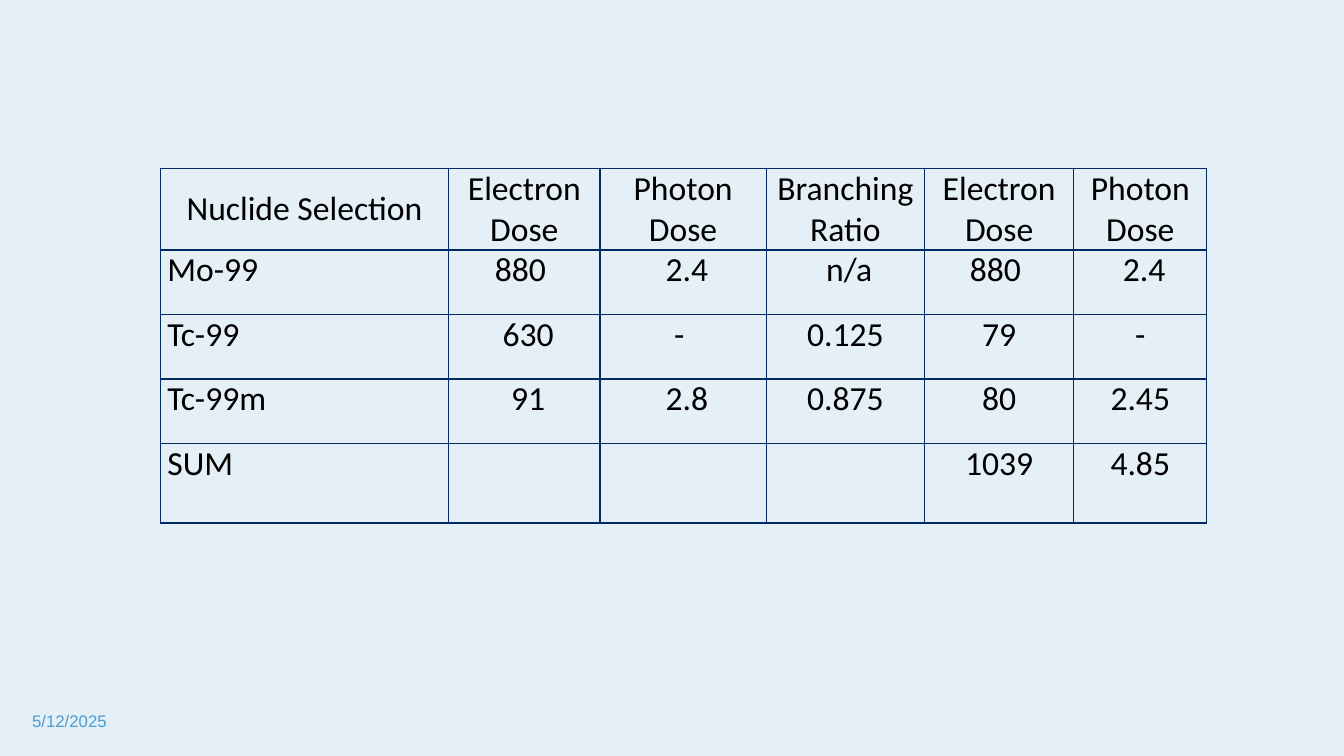
"""Build a slide with a table of nuclide doses."""
from dataclasses import dataclass

from lxml.etree import SubElement
from pptx import Presentation
from pptx.dml.color import RGBColor as Color
from pptx.enum.text import MSO_ANCHOR as Anchor, PP_ALIGN as Align
from pptx.oxml.ns import qn
from pptx.util import Inches, Pt

HEADERS = ["Nuclide Selection", "Electron Dose", "Photon Dose",
           "Branching Ratio", "Electron Dose", "Photon Dose"]
NUCLIDES = [
    ["Mo-99", "880 ", " 2.4", " n/a", "880 ", " 2.4"],
    ["Tc-99", " 630", "- ", "0.125", "79", "-"],
    ["Tc-99m", " 91", " 2.8", "0.875", "80", "2.45"],
    ["SUM", "", "", "", "1039", "4.85"],
]
DATE = "5/12/2025"
COLUMN_WIDTHS = [2.86, 1.5, 1.65, 1.57, 1.48, 1.32]
ROW_HEIGHTS = [0.81, 0.64, 0.64, 0.64, 0.79]
TABLE_LEFT, TABLE_TOP = 1.59, 1.67


@dataclass(frozen=True)
class Theme:
    """Colours, fonts and type sizes."""
    background: str = "E5EFF6"
    border: str = "002966"
    ink: str = "000000"
    date: str = "4B9CD3"
    table_font: str = "Calibri"
    date_font: str = "Arial"
    table_size: int = 24
    date_size: int = 12
    border_width: int = 1


THEME = Theme()


def write(frame, text, *, font, size, color, align=Align.LEFT):
    """Put formatted text into a text frame."""
    frame.word_wrap = True
    paragraph = frame.paragraphs[0]
    paragraph.alignment = align
    paragraph.font.size = Pt(size)
    if text:
        run = paragraph.add_run()
        run.text = text
        run.font.name = font
        run.font.size = Pt(size)
        run.font.color.rgb = Color.from_string(color)


def draw_borders(cell):
    """Line all four sides of a cell."""
    properties = cell._tc.get_or_add_tcPr()
    for side in ("a:lnL", "a:lnR", "a:lnT", "a:lnB"):
        line = SubElement(properties, qn(side), w=str(Pt(THEME.border_width)))
        fill = SubElement(line, qn("a:solidFill"))
        SubElement(fill, qn("a:srgbClr"), val=THEME.border)


def add_dose_table(slide):
    """Add the dose table."""
    rows = [HEADERS] + NUCLIDES
    table = slide.shapes.add_table(
        len(rows), len(HEADERS), Inches(TABLE_LEFT), Inches(TABLE_TOP),
        Inches(sum(COLUMN_WIDTHS)), Inches(sum(ROW_HEIGHTS))).table
    table.first_row = table.horz_banding = False
    for column, width in zip(table.columns, COLUMN_WIDTHS):
        column.width = Inches(width)
    for row, height in zip(table.rows, ROW_HEIGHTS):
        row.height = Inches(height)
    for row_index, row in enumerate(rows):
        for column_index, text in enumerate(row):
            cell = table.cell(row_index, column_index)
            is_header = row_index == 0
            is_name = column_index == 0 and not is_header
            draw_borders(cell)
            cell.fill.background()
            cell.margin_left = cell.margin_right = Inches(0.07)
            cell.margin_top = cell.margin_bottom = 0
            cell.vertical_anchor = Anchor.MIDDLE if is_header else Anchor.TOP
            write(cell.text_frame, text, font=THEME.table_font,
                  size=THEME.table_size, color=THEME.ink,
                  align=Align.JUSTIFY if is_name else Align.CENTER)


def add_date(slide):
    """Add the date at the lower left."""
    box = slide.shapes.add_textbox(
        Inches(0.22), Inches(6.95), Inches(3), Inches(0.4))
    box.text_frame.vertical_anchor = Anchor.MIDDLE
    write(box.text_frame, DATE, font=THEME.date_font,
          size=THEME.date_size, color=THEME.date)


def main():
    """Build and save the presentation."""
    presentation = Presentation()
    presentation.slide_width = Inches(13.33)
    presentation.slide_height = Inches(7.5)
    slide = presentation.slides.add_slide(presentation.slide_layouts[6])
    background = slide.background.fill
    background.solid()
    background.fore_color.rgb = Color.from_string(THEME.background)
    add_date(slide)
    add_dose_table(slide)
    presentation.save("out.pptx")


if __name__ == "__main__":
    main()
